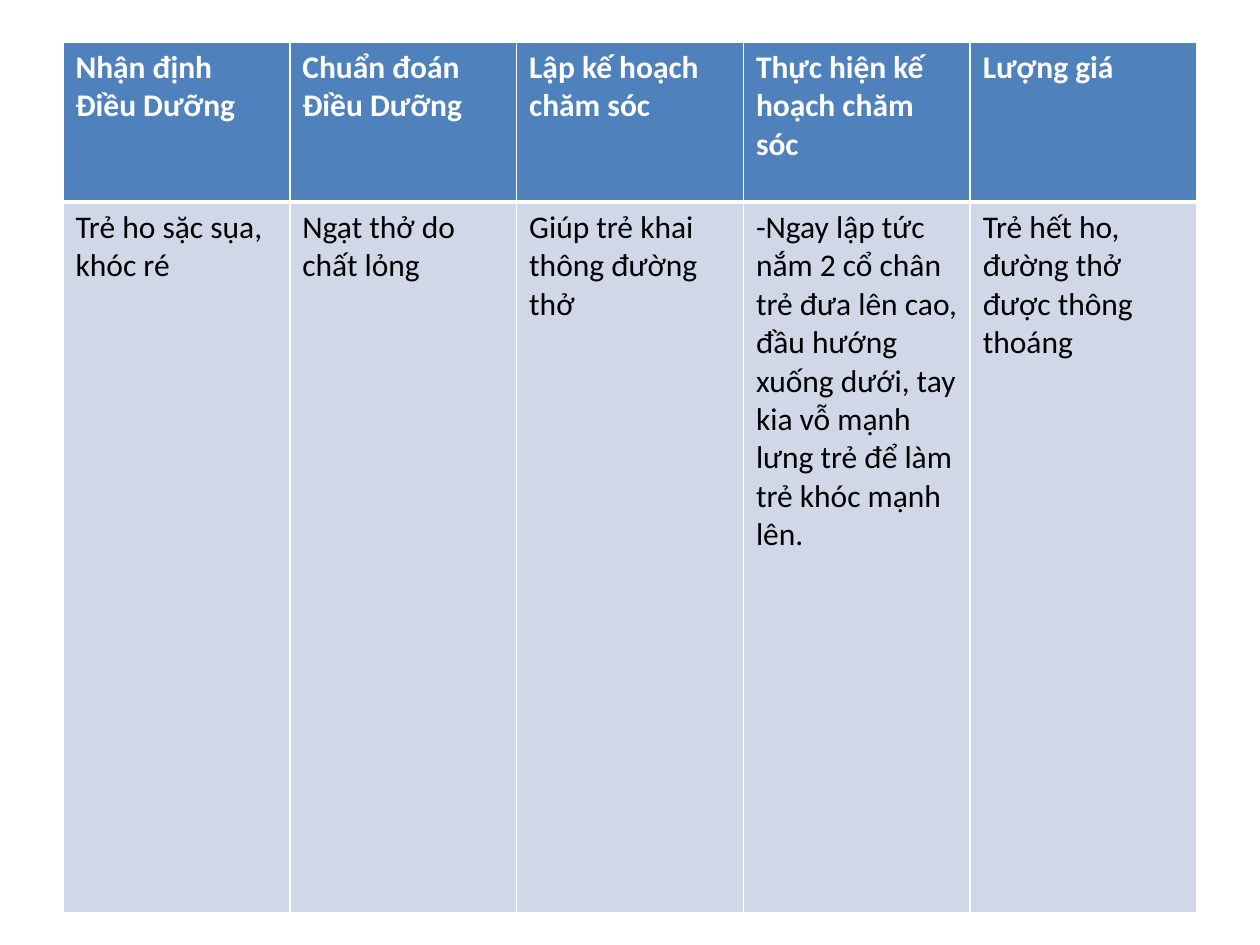
from lxml import etree
from pptx import Presentation
from pptx.dml.color import RGBColor
from pptx.oxml.ns import qn
from pptx.util import Emu, Pt

EMU_PER_PX = 914400 / 126
WHITE = RGBColor(0xFF, 0xFF, 0xFF)
BLACK = RGBColor(0x00, 0x00, 0x00)
HEADER_BLUE = RGBColor(0x4F, 0x81, 0xBD)
BODY_BLUE = RGBColor(0xD0, 0xD8, 0xE8)

CARE_PLAN = [
    ("Nhận định Điều Dưỡng", "Trẻ ho sặc sụa, khóc ré"),
    ("Chuẩn đoán Điều Dưỡng", "Ngạt thở do chất lỏng"),
    ("Lập kế hoạch chăm sóc", "Giúp trẻ khai thông đường thở"),
    ("Thực hiện kế hoạch chăm sóc",
     "-Ngay lập tức nắm 2 cổ chân trẻ đưa lên cao, đầu hướng xuống dưới, "
     "tay kia vỗ mạnh lưng trẻ để làm trẻ khóc mạnh lên."),
    ("Lượng giá", "Trẻ hết ho, đường thở được thông thoáng"),
]


def px(length):
    return Emu(round(length * EMU_PER_PX))


def write_text(frame, text, *, color, font="Calibri", size=18, bold=False):
    run = frame.paragraphs[0].add_run()
    run.text = text
    run.font.name = font
    run.font.size = Pt(size)
    run.font.bold = bold
    run.font.color.rgb = color


def set_borders(cell, color, **widths):
    """Draw the cell edges L, R, T and B, with widths in points."""
    properties = cell._tc.get_or_add_tcPr()
    for position, side in enumerate("LRTB"):
        line = etree.Element(qn(f"a:ln{side}"), w=str(Pt(widths[side])))
        fill = etree.SubElement(line, qn("a:solidFill"))
        etree.SubElement(fill, qn("a:srgbClr"), val=str(color))
        properties.insert(position, line)  # borders come before the fill


class SlideBuilder:
    # Fill, text colour, bold, top border, bottom border
    HEADER = (HEADER_BLUE, WHITE, True, 1, 3)
    BODY = (BODY_BLUE, BLACK, False, 3, 1)

    def __init__(self, presentation):
        self.slide = presentation.slides.add_slide(presentation.slide_layouts[6])

    def cell(self, cell, text, style):
        fill, color, bold, top, bottom = style
        cell.fill.solid()
        cell.fill.fore_color.rgb = fill
        set_borders(cell, WHITE, L=1, R=1, T=top, B=bottom)
        write_text(cell.text_frame, text, color=color, bold=bold)

    def table(self, columns, left, top, width, row_heights):
        table = self.slide.shapes.add_table(
            len(row_heights), len(columns),
            px(left), px(top), px(width), px(sum(row_heights))).table
        for row, height in zip(table.rows, row_heights):
            row.height = px(height)
        for index, (heading, details) in enumerate(columns):
            table.columns[index].width = px(width / len(columns))
            self.cell(table.cell(0, index), heading, self.HEADER)
            self.cell(table.cell(1, index), details, self.BODY)


def main():
    presentation = Presentation()
    presentation.slide_width, presentation.slide_height = px(1260), px(945)

    # Nursing care plan
    builder = SlideBuilder(presentation)
    builder.table(CARE_PLAN, left=63, top=42, width=1134, row_heights=(160, 711))

    presentation.save("out.pptx")


if __name__ == "__main__":
    main()
